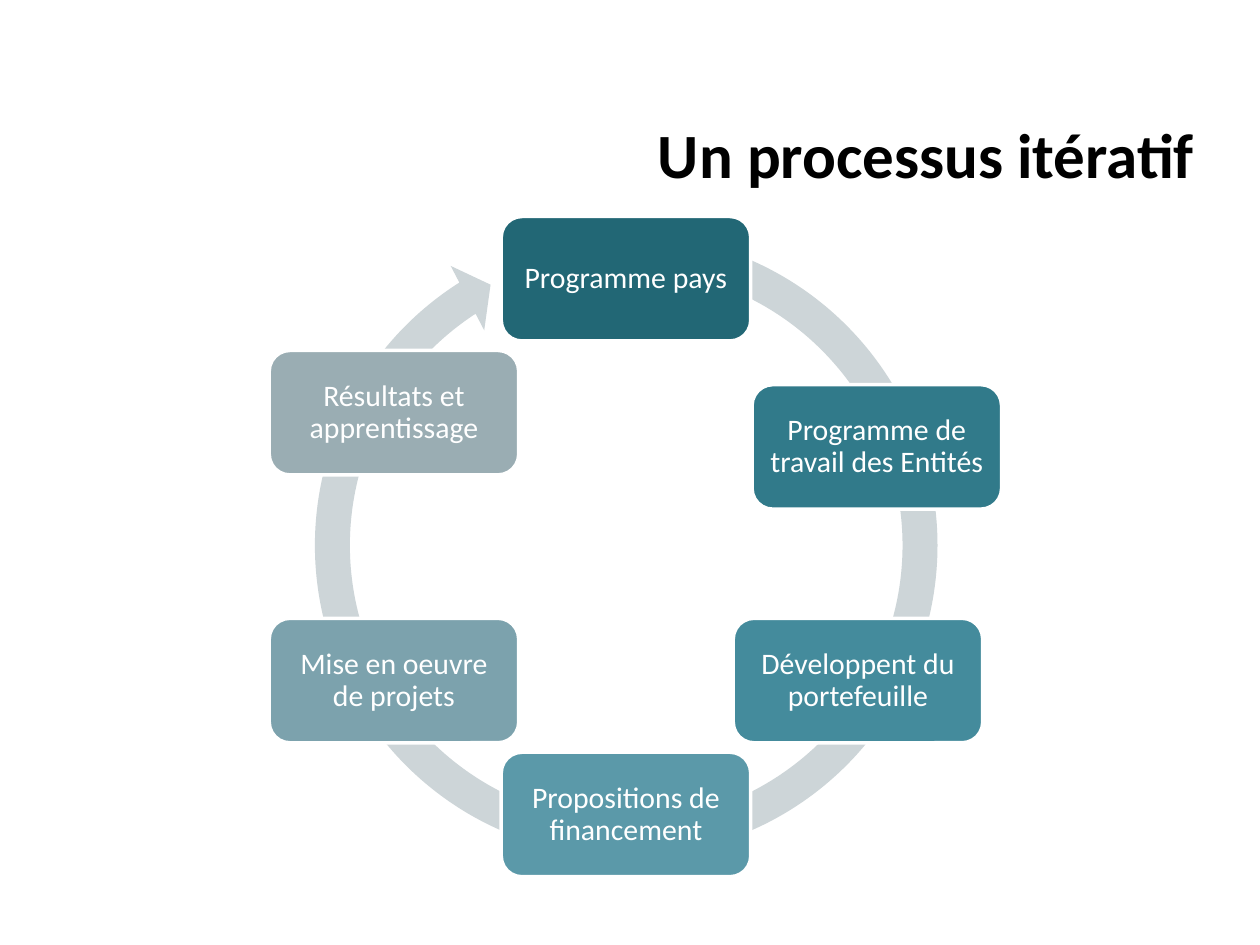
from math import cos, radians, sin

from pptx import Presentation
from pptx.dml.color import RGBColor
from pptx.enum.shapes import MSO_SHAPE
from pptx.enum.text import MSO_ANCHOR, PP_ALIGN
from pptx.util import Cm, Pt

BLACK = RGBColor(0x00, 0x00, 0x00)
WHITE = RGBColor(0xFF, 0xFF, 0xFF)
RING_GREY = RGBColor(0xCD, 0xD5, 0xD8)

# Step label, fill, and shift from its regular place on the ring (cm)
STEPS = [
    ("Programme pays", RGBColor(0x22, 0x67, 0x75), 0, 0),
    ("Programme de travail des Entités", RGBColor(0x31, 0x7A, 0x8A), 0.38, 0.69),
    ("Développent du portefeuille", RGBColor(0x44, 0x8B, 0x9C), 0, 0),
    ("Propositions de financement", RGBColor(0x5B, 0x99, 0xA9), 0, 0),
    ("Mise en oeuvre de projets", RGBColor(0x7C, 0xA2, 0xAD), 0, 0),
    ("Résultats et apprentissage", RGBColor(0x9A, 0xAD, 0xB3), 0, 0),
]
CENTER_X, CENTER_Y, RADIUS = 12.62, 11.02, 5.4
BOX_WIDTH, BOX_HEIGHT = 5.03, 2.51
RING_SIZE = 13.31


def write_text(shape, text, size, color, bold=False, align=PP_ALIGN.CENTER,
               anchor=MSO_ANCHOR.MIDDLE, line_spacing=None, margin=None):
    frame = shape.text_frame
    frame.word_wrap = True
    frame.vertical_anchor = anchor
    if margin is not None:
        frame.margin_left = frame.margin_right = margin
        frame.margin_top = frame.margin_bottom = margin
    paragraph = frame.paragraphs[0]
    paragraph.alignment = align
    paragraph.line_spacing = line_spacing
    run = paragraph.add_run()
    run.text = text
    run.font.name = "Calibri"
    run.font.size = Pt(size)
    run.font.bold = bold
    run.font.color.rgb = color


presentation = Presentation()
presentation.slide_width = Cm(25.4)
presentation.slide_height = Cm(19.05)
slide = presentation.slides.add_slide(presentation.slide_layouts[6])

# Title
title = slide.shapes.add_textbox(Cm(6.02), Cm(2.21), Cm(18.31), Cm(1.88))
write_text(title, "Un processus itératif", size=36, color=BLACK, bold=True,
           align=PP_ALIGN.RIGHT, anchor=MSO_ANCHOR.TOP)

# Ring arrow behind the steps
ring = slide.shapes.add_shape(MSO_SHAPE.CIRCULAR_ARROW, Cm(5.97), Cm(4.34),
                              Cm(RING_SIZE), Cm(RING_SIZE))
ring.shadow.inherit = False
for index, value in enumerate((0.053, 3.126, 142.378, 171.213, 0.055)):
    ring.adjustments[index] = value
ring.fill.solid()
ring.fill.fore_color.rgb = RING_GREY
ring.line.fill.background()

# Steps, clockwise from the top
for index, (label, fill, shift_x, shift_y) in enumerate(STEPS):
    angle = radians(index * 360 / len(STEPS))
    left = CENTER_X + RADIUS * sin(angle) + shift_x - BOX_WIDTH / 2
    top = CENTER_Y - RADIUS * cos(angle) + shift_y - BOX_HEIGHT / 2
    step = slide.shapes.add_shape(MSO_SHAPE.ROUNDED_RECTANGLE, Cm(left), Cm(top),
                                  Cm(BOX_WIDTH), Cm(BOX_HEIGHT))
    step.shadow.inherit = False
    step.fill.solid()
    step.fill.fore_color.rgb = fill
    step.line.color.rgb = WHITE
    step.line.width = Pt(2)
    write_text(step, label, size=17, color=WHITE, line_spacing=0.9, margin=Cm(0.18))

presentation.save("out.pptx")
